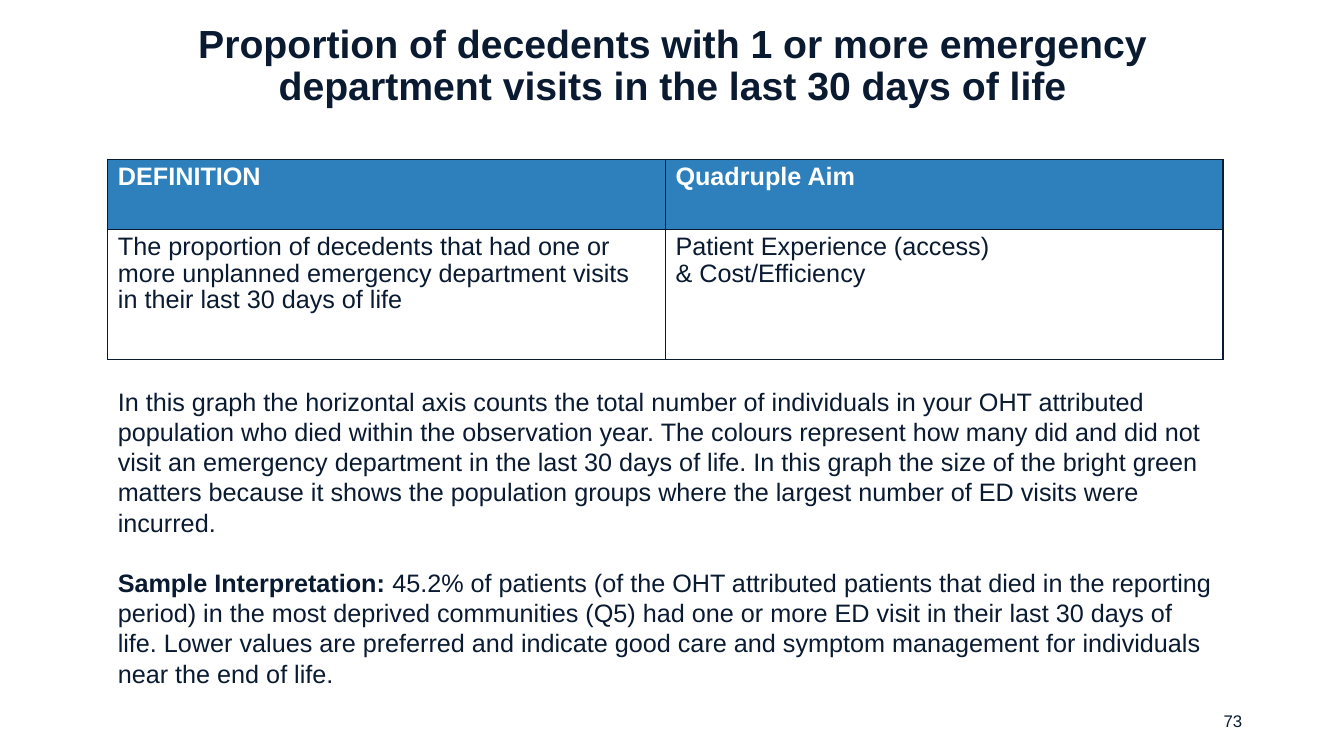
from lxml import etree
from pptx import Presentation
from pptx.dml.color import RGBColor
from pptx.enum.text import MSO_ANCHOR, PP_ALIGN
from pptx.oxml.ns import qn
from pptx.util import Inches, Pt

NAVY, BLUE, WHITE = "0A1A31", "2E80BC", "FFFFFF"
MARGIN, CONTENT_WIDTH = 1.07, 11.06

TITLE = ("Proportion of decedents with 1 or more emergency department visits "
         "in the last 30 days of life")
DEFINITION_ROWS = [
    ["DEFINITION", "Quadruple Aim"],
    ["The proportion of decedents that had one or more unplanned emergency "
     "department visits in their last 30 days of life",
     "Patient Experience (access)\n& Cost/Efficiency"],
]
ROW_HEIGHTS = [0.7, 1.29]
GRAPH_GUIDE = (
    "In this graph the horizontal axis counts the total number of individuals in your OHT "
    "attributed population who died within the observation year. The colours represent how many "
    "did and did not visit an emergency department in the last 30 days of life. In this graph "
    "the size of the bright green matters because it shows the population groups where the "
    "largest number of ED visits were incurred.")
SAMPLE_LABEL = "Sample Interpretation: "
SAMPLE = (
    "45.2% of patients (of the OHT attributed patients that died in the reporting period) in the "
    "most deprived communities (Q5) had one or more ED visit in their last 30 days of life. Lower "
    "values are preferred and indicate good care and symptom management for individuals near the "
    "end of life.")


def color(hex_value):
    return RGBColor.from_string(hex_value)


def style(part, size, hex_value=NAVY, bold=False):
    part.font.name = "Arial"
    part.font.size = Pt(size)
    part.font.bold = bold
    part.font.color.rgb = color(hex_value)


def add_text_frame(slide, left, top, width, height, anchor=MSO_ANCHOR.TOP):
    box = slide.shapes.add_textbox(Inches(left), Inches(top), Inches(width), Inches(height))
    frame = box.text_frame
    frame.word_wrap = True
    frame.vertical_anchor = anchor
    return frame


def add_line(slide, box, text, size, align, bold=False):
    """A single vertically centred paragraph: the title or the page number."""
    frame = add_text_frame(slide, *box, anchor=MSO_ANCHOR.MIDDLE)
    frame.text = text
    paragraph = frame.paragraphs[0]
    paragraph.alignment = align
    style(paragraph.runs[0], size, bold=bold)
    return paragraph


def outline_cell(cell):
    properties = cell._tc.get_or_add_tcPr()
    for position, side in enumerate(("a:lnL", "a:lnR", "a:lnT", "a:lnB")):
        border = etree.Element(qn(side), w=str(Pt(1)))
        fill = etree.SubElement(border, qn("a:solidFill"))
        etree.SubElement(fill, qn("a:srgbClr"), val=NAVY)
        properties.insert(position, border)


def add_definition_table(slide, left, top, width, row_heights):
    table = slide.shapes.add_table(
        len(DEFINITION_ROWS), 2, Inches(left), Inches(top),
        Inches(width), Inches(sum(row_heights))).table
    for column in table.columns:
        column.width = Inches(width / 2)
    for row_index, texts in enumerate(DEFINITION_ROWS):
        is_header = row_index == 0
        table.rows[row_index].height = Inches(row_heights[row_index])
        for column_index, text in enumerate(texts):
            cell = table.cell(row_index, column_index)
            cell.text_frame.text = text
            cell.fill.solid()
            cell.fill.fore_color.rgb = color(BLUE if is_header else WHITE)
            outline_cell(cell)
            for paragraph in cell.text_frame.paragraphs:
                paragraph.line_spacing = 0.93
                style(paragraph.runs[0], 18, WHITE if is_header else NAVY, bold=is_header)


def add_explanation(slide, left, top, width, height):
    frame = add_text_frame(slide, left, top, width, height)
    frame.text = GRAPH_GUIDE
    style(frame.paragraphs[0].runs[0], 18)
    interpretation = frame.add_paragraph()
    interpretation.space_before = Pt(21.5)
    for text, bold in ((SAMPLE_LABEL, True), (SAMPLE, False)):
        run = interpretation.add_run()
        run.text = text
        style(run, 18, bold=bold)


def main():
    deck = Presentation()
    deck.slide_width, deck.slide_height = Inches(13.33), Inches(7.5)
    slide = deck.slides.add_slide(deck.slide_layouts[6])

    # Title
    title = add_line(slide, (0.77, 0.24, 11.8, 0.84), TITLE, 28, PP_ALIGN.CENTER, bold=True)
    title.line_spacing = 0.9

    # Definition and explanation
    add_definition_table(slide, MARGIN, 1.58, CONTENT_WIDTH, ROW_HEIGHTS)
    add_explanation(slide, MARGIN, 3.78, CONTENT_WIDTH, 3.13)

    # Page number
    add_line(slide, (9.42, 6.95, 3, 0.4), "73", 12, PP_ALIGN.RIGHT)
    deck.save("out.pptx")


if __name__ == "__main__":
    main()
